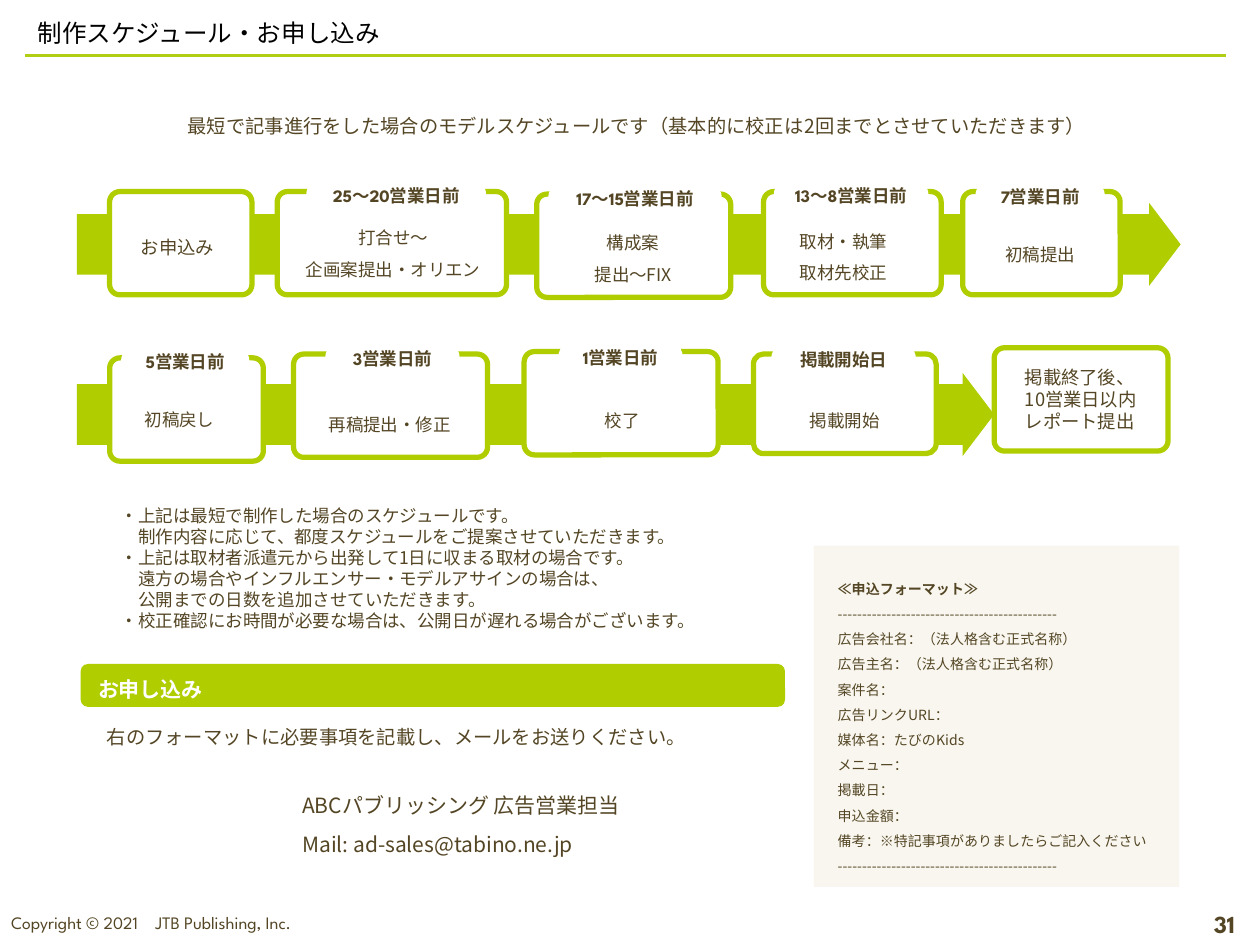
import pptx
import pptx.dml.color
import pptx.enum.shapes
import pptx.enum.text
import pptx.oxml
import pptx.oxml.ns
import pptx.util

GREEN = pptx.dml.color.RGBColor(0xB0, 0xCD, 0x00)
RULE_GREEN = pptx.dml.color.RGBColor(0xB1, 0xCE, 0x14)
BROWN = pptx.dml.color.RGBColor(0x54, 0x46, 0x25)
CREAM = pptx.dml.color.RGBColor(0xF8, 0xF6, 0xEE)
WHITE = pptx.dml.color.RGBColor(0xFF, 0xFF, 0xFF)
BLACK = pptx.dml.color.RGBColor(0x00, 0x00, 0x00)
HEADING_FONT = "League Spartan"
BODY_FONT = "Noto Sans CJK JP"
SHAPES = pptx.enum.shapes.MSO_SHAPE
LEFT = pptx.enum.text.PP_ALIGN.LEFT
CENTER = pptx.enum.text.PP_ALIGN.CENTER
RIGHT = pptx.enum.text.PP_ALIGN.RIGHT
TOP = pptx.enum.text.MSO_ANCHOR.TOP
MIDDLE = pptx.enum.text.MSO_ANCHOR.MIDDLE

presentation = pptx.Presentation()
presentation.slide_width = pptx.util.Inches(10)
presentation.slide_height = pptx.util.Inches(7.5)
column = presentation.slide_width / 100
row = presentation.slide_height / 75
slide = presentation.slides.add_slide(presentation.slide_layouts[1])


def add_shape(kind, area, fill=None, line=None, adjustments=()):
    left, top, width, height = area
    shape = slide.shapes.add_shape(
        kind, int(left * column), int(top * row), int(width * column), int(height * row))
    shape.shadow.inherit = False
    for index, value in enumerate(adjustments):
        shape.adjustments[index] = value
    if fill is None:
        shape.fill.background()
    else:
        shape.fill.solid()
        shape.fill.fore_color.rgb = fill
    if line is None:
        shape.line.fill.background()
    else:
        shape.line.color.rgb = line
        shape.line.width = pptx.util.Pt(3)
    return shape


def write(shape, lines, size, font=BODY_FONT, color=BROWN, bold_lines=0,
          align=LEFT, anchor=MIDDLE, spacing=1):
    frame = shape.text_frame
    frame.word_wrap = True
    frame.auto_size = pptx.enum.text.MSO_AUTO_SIZE.NONE
    frame.vertical_anchor = anchor
    for index, line in enumerate(lines):
        paragraph = frame.paragraphs[0] if index == 0 else frame.add_paragraph()
        paragraph.alignment = align
        paragraph.space_before = pptx.util.Pt(0)
        paragraph.line_spacing = pptx.util.Pt(size * 1.2 * spacing)
        run = paragraph.add_run()
        run.text = line
        run.font.size = pptx.util.Pt(size)
        run.font.name = font
        run.font.bold = index < bold_lines
        run.font.color.rgb = color
        east_asian = pptx.oxml.parse_xml(
            f'<a:ea {pptx.oxml.ns.nsdecls("a")} typeface="{font}"/>')
        run.font._element.find(pptx.oxml.ns.qn("a:latin")).addnext(east_asian)


rule = slide.shapes.add_connector(
    pptx.enum.shapes.MSO_CONNECTOR.STRAIGHT,
    int(2 * column), int(4.4 * row), int(97.3 * column), int(4.4 * row))
rule.line.color.rgb = RULE_GREEN
rule.line.width = pptx.util.Pt(1.75)
rule._element.spPr.append(pptx.oxml.parse_xml(f'<a:effectLst {pptx.oxml.ns.nsdecls("a")}/>'))

title = slide.shapes.title
notes = slide.placeholders[1]
for placeholder, (left, top, width, height) in (
        (title, (2, 1, 72.4, 3.4)), (notes, (8.6, 39.6, 50.9, 11.1))):
    placeholder.left, placeholder.top = int(left * column), int(top * row)
    placeholder.width, placeholder.height = int(width * column), int(height * row)
write(title, ["制作スケジュール・お申し込み"], 14, HEADING_FONT, BLACK, spacing=0.9)
write(notes, [
    "・上記は最短で制作した場合のスケジュールです。",
    "　制作内容に応じて、都度スケジュールをご提案させていただきます。",
    "・上記は取材者派遣元から出発して1日に収まる取材の場合です。",
    "　遠方の場合やインフルエンサー・モデルアサインの場合は、",
    "　公開までの日数を追加させていただきます。",
    "・校正確認にお時間が必要な場合は、公開日が遅れる場合がございます。",
], 10, anchor=TOP)
for paragraph in notes.text_frame.paragraphs:
    properties = paragraph._element.get_or_add_pPr()
    properties.set("marL", "0")
    properties.set("indent", "0")
    properties.append(pptx.oxml.parse_xml(f'<a:buNone {pptx.oxml.ns.nsdecls("a")}/>'))

for arrow_area in ((39.2, -3.5, 6.6, 72.8), (46.6, -24.4, 6.6, 87.6)):
    arrow = add_shape(SHAPES.UP_ARROW, arrow_area, GREEN, adjustments=(0.73, 0.38))
    arrow.rotation = 90

steps = [
    ((8.7, 15.2, 11.3, 8.2), None, "", (10.2, 15.2, 8.5, 8), ["お申込み"], LEFT),
    ((22, 15.2, 18.2, 8.2), (24.3, 14.1, 14.3, 2.8), "25〜20営業日前",
     (22.3, 16, 17.8, 7.4), ["打合せ～", "企画案提出・オリエン"], CENTER),
    ((42.6, 15.4, 15.4, 8.2), (43.5, 14.2, 13.8, 3.1), "17〜15営業日前",
     (43.1, 17.2, 14.3, 5.8), ["構成案", "提出～FIX"], CENTER),
    ((60.6, 15.2, 14.1, 8.2), (61.4, 14.2, 12.3, 2.6), "13〜8営業日前",
     (62.5, 16.3, 10.9, 7.4), ["取材・執筆", "取材先校正"], LEFT),
    ((76.4, 15.2, 12.5, 8.2), (77.4, 14.1, 10.3, 3), "7営業日前",
     (78.8, 17.1, 9.3, 5.3), ["初稿提出"], LEFT),
    ((8.7, 28.4, 12.2, 8.2), (9.6, 27.3, 10.2, 2.8), "5営業日前",
     (10.5, 30.2, 9.3, 5.3), ["初稿戻し"], LEFT),
    ((23.3, 28.1, 15.4, 8.2), (25.8, 26.8, 10.7, 3.4), "3営業日前",
     (25.1, 30.6, 14.1, 5.3), ["再稿提出・修正"], LEFT),
    ((41.6, 27.9, 15.4, 8.2), (44.3, 26.9, 9.9, 3), "1営業日前",
     (47, 30.3, 7.2, 5.3), ["校了"], LEFT),
    ((59.8, 28.1, 14.5, 7.9), (61.2, 27.1, 11.5, 2.8), "掲載開始日",
     (63.3, 30.3, 8.5, 5.3), ["掲載開始"], LEFT),
]
for card_area, label_area, label, task_area, task, align in steps:
    add_shape(SHAPES.ROUNDED_RECTANGLE, card_area, WHITE, GREEN, (0.1,))
    task_shape = add_shape(SHAPES.PENTAGON, task_area, adjustments=(0,))
    write(task_shape, task, 10 if label else 10.5, align=align, spacing=1.5)
    if label:
        label_shape = add_shape(SHAPES.ROUNDED_RECTANGLE, label_area, WHITE, adjustments=(0.5,))
        write(label_shape, [label], 10, HEADING_FONT, bold_lines=1, align=CENTER)

report = add_shape(SHAPES.ROUNDED_RECTANGLE, (78.9, 27.6, 13.8, 8.2), None, GREEN, (0.1,))
write(report, ["掲載終了後、", "10営業日以内", "レポート提出"], 10.5)
report.text_frame.margin_left = int(2.2 * column)

add_shape(SHAPES.RECTANGLE, (64.6, 43.3, 29, 27.1), CREAM)
add_shape(SHAPES.ROUNDED_RECTANGLE, (6.4, 52.7, 55.9, 3.4), GREEN)

divider = "-" * 45
form_lines = [
    "≪申込フォーマット≫", divider, "広告会社名：（法人格含む正式名称）",
    "広告主名：（法人格含む正式名称）", "案件名：", "広告リンクURL：",
    "媒体名：たびのKids", "メニュー：", "掲載日：", "申込金額：",
    "備考：※特記事項がありましたらご記入ください", divider,
]
texts = [
    ((13.9, 8.6, 73.9, 2.9),
     ["最短で記事進行をした場合のモデルスケジュールです（基本的に校正は2回までとさせていただきます）"],
     dict(size=11)),
    ((7.5, 57.1, 50, 2.9), ["右のフォーマットに必要事項を記載し、メールをお送りください。"], dict(size=11)),
    ((65.5, 44.9, 27.2, 25.1), form_lines, dict(size=8, bold_lines=1, spacing=1.5)),
    ((23, 62.4, 34.9, 3), ["ABCパブリッシング 広告営業担当"], dict(size=12)),
    ((23, 65.5, 34.2, 3), ["Mail: ad-sales@tabino.ne.jp"], dict(size=12)),
    ((6.8, 53.2, 39.6, 3), ["お申し込み"],
     dict(size=12, font=HEADING_FONT, color=WHITE, bold_lines=1)),
    ((-0.1, 71.9, 28.9, 2.7), ["Copyright © 2021　JTB Publishing, Inc."],
     dict(size=10, font=HEADING_FONT, anchor=MIDDLE)),
    ((76.5, 71.7, 22.5, 3.3), ["31"],
     dict(size=14, font=HEADING_FONT, bold_lines=1, align=RIGHT, anchor=MIDDLE)),
]
for (left, top, width, height), lines, style in texts:
    text_box = slide.shapes.add_textbox(
        int(left * column), int(top * row), int(width * column), int(height * row))
    write(text_box, lines, **{"anchor": TOP, **style})

presentation.save("out.pptx")
